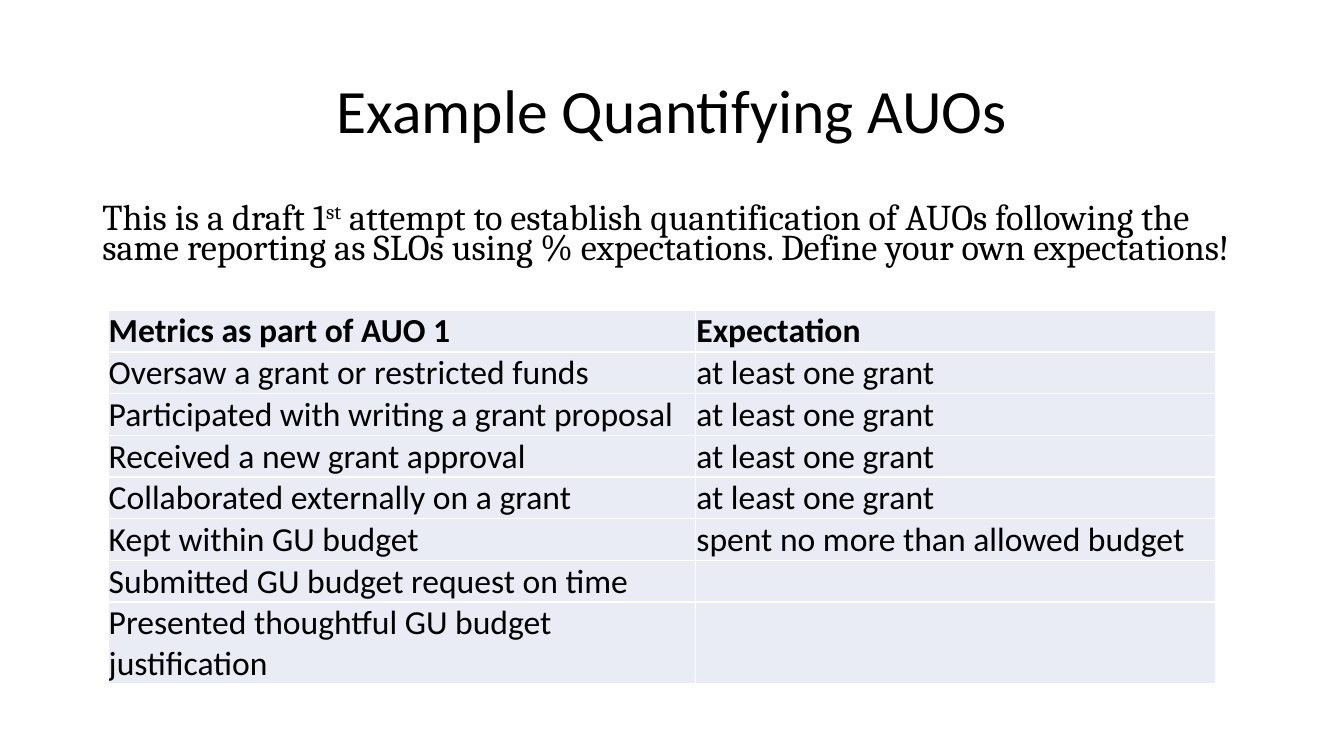
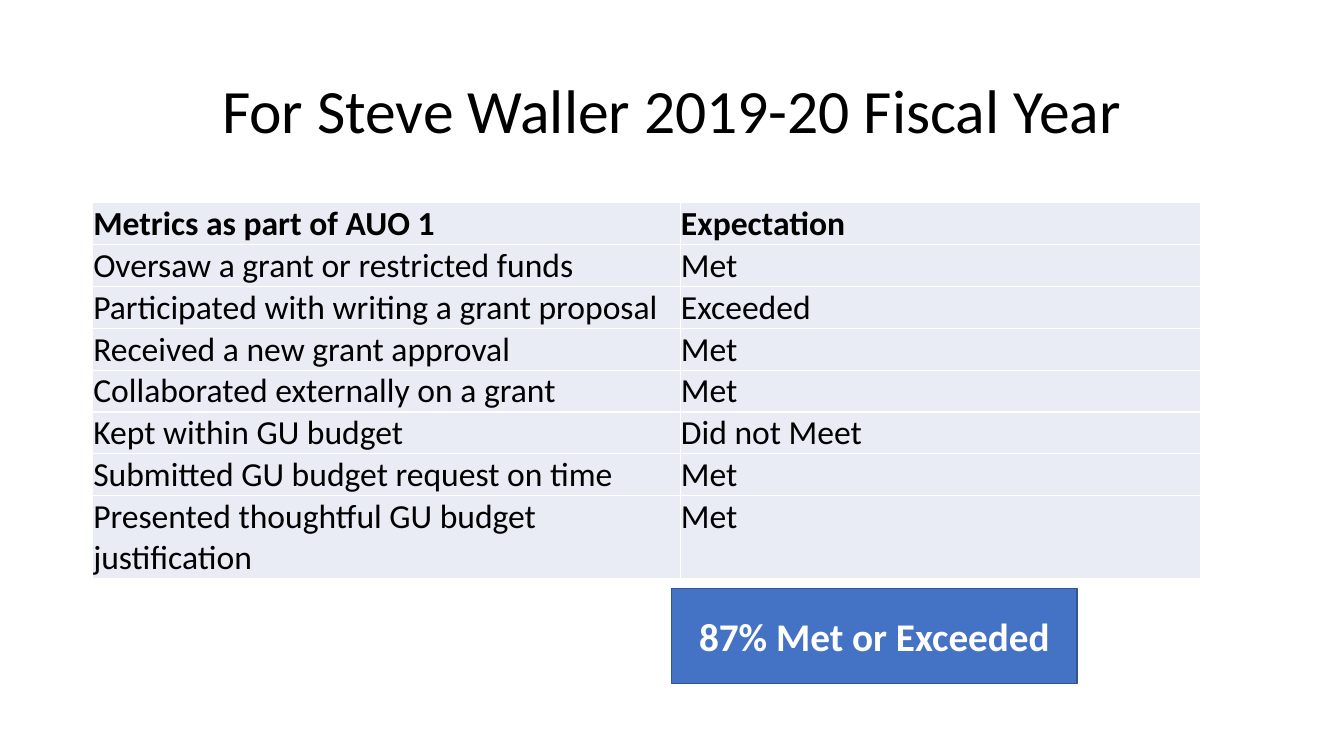
from lxml.etree import SubElement
from pptx import Presentation
from pptx.dml.color import RGBColor
from pptx.enum.shapes import MSO_SHAPE
from pptx.enum.text import MSO_ANCHOR, MSO_AUTO_SIZE, PP_ALIGN
from pptx.oxml.ns import qn
from pptx.util import Cm, Pt

BLACK = RGBColor(0x00, 0x00, 0x00)
WHITE = RGBColor(0xFF, 0xFF, 0xFF)
CELL_FILL = RGBColor(0xE9, 0xEB, 0xF5)
BLUE = RGBColor(0x44, 0x72, 0xC4)
DARK_BLUE = RGBColor(0x32, 0x54, 0x91)

BODY_FONT = "Calibri"
INTRO_FONT = "Cambria"

TITLE_BOX = (Cm(2.33), Cm(1.01), Cm(29.21), Cm(3.68))
INTRO_BOX = (Cm(2.33), Cm(5.07), Cm(29.21), Cm(2.75))
COLUMN_WIDTHS = (Cm(14.81), Cm(13.11))
ROW_HEIGHT = Cm(1.05)
CELL_INSET = Cm(0.02)

METRICS = (
    "Oversaw a grant or restricted funds",
    "Participated with writing a grant proposal",
    "Received a new grant approval",
    "Collaborated externally on a grant",
    "Kept within GU budget",
    "Submitted GU budget request on time",
    "Presented thoughtful GU budget justification",
)
TARGETS = ("at least one grant",) * 4 + ("spent no more than allowed budget", "", "")
RESULTS = ("Met", "Exceeded", "Met", "Met", "Did not Meet", "Met", "Met")


def add_run(paragraph, text, size, color=BLACK, font=BODY_FONT, bold=False):
    run = paragraph.add_run()
    run.text = text
    run.font.name = font
    run.font.size = Pt(size)
    run.font.bold = bold
    run.font.color.rgb = color
    return run


def add_titled_slide(presentation, text):
    slide = presentation.slides.add_slide(presentation.slide_layouts[5])
    title = slide.shapes.title
    title.left, title.top, title.width, title.height = TITLE_BOX
    frame = title.text_frame
    frame.auto_size = MSO_AUTO_SIZE.NONE
    frame.vertical_anchor = MSO_ANCHOR.MIDDLE
    paragraph = frame.paragraphs[0]
    paragraph.alignment = PP_ALIGN.CENTER
    paragraph.line_spacing = 0.9
    add_run(paragraph, text, 44)
    return slide


def add_intro(slide, box):
    frame = slide.shapes.add_textbox(*box).text_frame
    frame.word_wrap = True
    paragraph = frame.paragraphs[0]
    paragraph.line_spacing = 0.7
    add_run(paragraph, "This is a draft 1", 25.9, font=INTRO_FONT)
    ordinal = add_run(paragraph, "st", 25.9, font=INTRO_FONT)
    ordinal.font._element.set("baseline", "30000")
    add_run(
        paragraph,
        " attempt to establish quantification of AUOs following the same reporting "
        "as SLOs using % expectations. Define your own expectations!",
        25.9,
        font=INTRO_FONT,
    )


def add_cell_borders(cell):
    properties = cell._tc.get_or_add_tcPr()
    for side in ("a:lnL", "a:lnR", "a:lnT", "a:lnB"):
        line = SubElement(properties, qn(side), w=str(Pt(1)))
        fill = SubElement(line, qn("a:solidFill"))
        SubElement(fill, qn("a:srgbClr"), val=str(WHITE))


def fill_cell(cell, text, bold, anchor):
    add_cell_borders(cell)
    cell.fill.solid()
    cell.fill.fore_color.rgb = CELL_FILL
    cell.margin_left = cell.margin_right = cell.margin_top = CELL_INSET
    cell.margin_bottom = 0
    cell.vertical_anchor = anchor
    if text:
        add_run(cell.text_frame.paragraphs[0], text, 24, bold=bold)


def add_metrics_table(slide, left, top, expectations):
    rows = [("Metrics as part of AUO 1", "Expectation"), *zip(METRICS, expectations)]
    table = slide.shapes.add_table(
        len(rows), len(COLUMN_WIDTHS), left, top, sum(COLUMN_WIDTHS), ROW_HEIGHT * len(rows)
    ).table
    for column, width in zip(table.columns, COLUMN_WIDTHS):
        column.width = width
    last_row = len(rows) - 1
    for row_index, row in enumerate(rows):
        for column_index, text in enumerate(row):
            at_top = row_index == last_row and column_index == 1
            anchor = MSO_ANCHOR.TOP if at_top else MSO_ANCHOR.BOTTOM
            fill_cell(table.cell(row_index, column_index), text, row_index == 0, anchor)


def add_summary(slide, box, text):
    shape = slide.shapes.add_shape(MSO_SHAPE.RECTANGLE, *box)
    shape.shadow.inherit = False
    shape.fill.solid()
    shape.fill.fore_color.rgb = BLUE
    shape.line.color.rgb = DARK_BLUE
    shape.line.width = Pt(1)
    frame = shape.text_frame
    frame.word_wrap = True
    frame.vertical_anchor = MSO_ANCHOR.MIDDLE
    paragraph = frame.paragraphs[0]
    paragraph.alignment = PP_ALIGN.CENTER
    add_run(paragraph, text, 28, color=WHITE, bold=True)


def build_targets_slide(presentation):
    slide = add_titled_slide(presentation, "Example Quantifying AUOs")
    add_intro(slide, INTRO_BOX)
    add_metrics_table(slide, Cm(2.72), Cm(7.82), TARGETS)


def build_results_slide(presentation):
    slide = add_titled_slide(presentation, "For Steve Waller 2019-20 Fiscal Year")
    add_metrics_table(slide, Cm(2.33), Cm(5.11), RESULTS)
    add_summary(slide, (Cm(16.93), Cm(14.83), Cm(10.21), Cm(2.39)), "87% Met or Exceeded")


def main():
    presentation = Presentation()
    presentation.slide_width = Cm(33.87)
    presentation.slide_height = Cm(19.05)
    build_targets_slide(presentation)
    build_results_slide(presentation)
    presentation.save("out.pptx")


if __name__ == "__main__":
    main()
